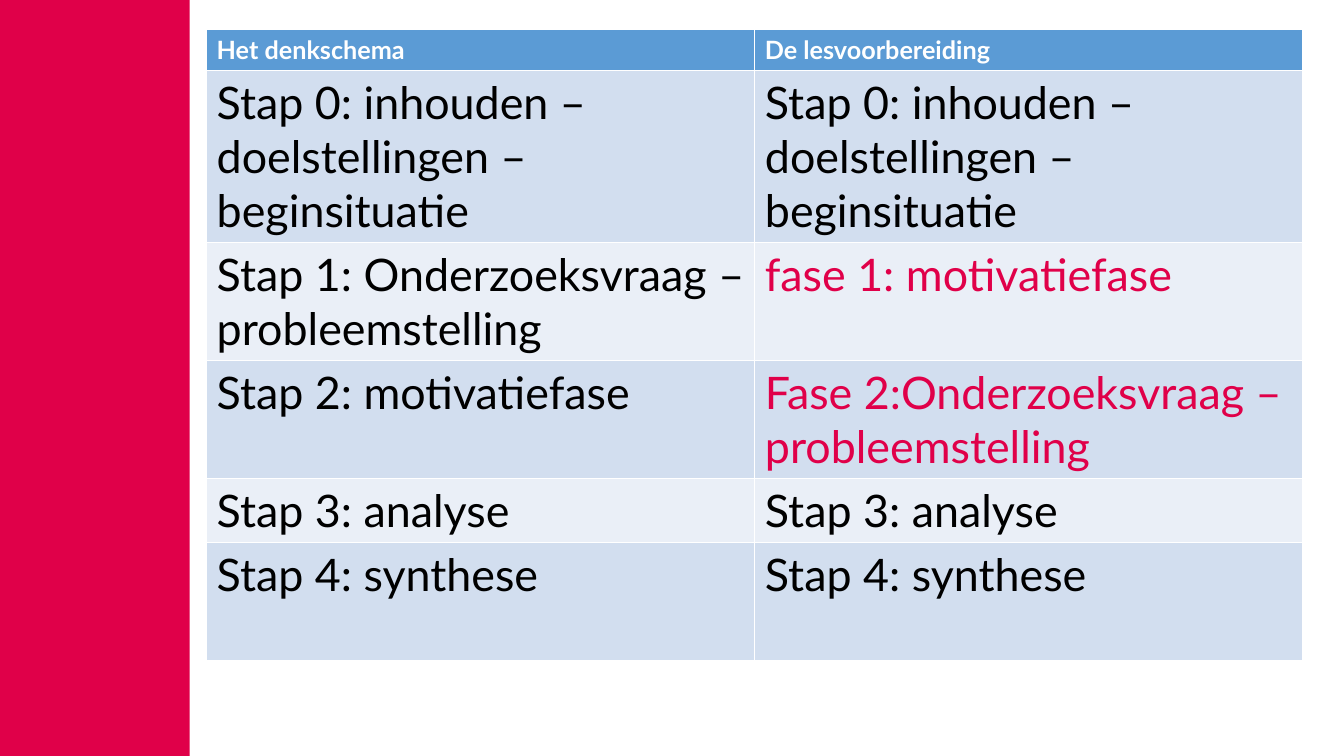
import pptx
import pptx.util
import pptx.dml.color
import pptx.enum.shapes

Pt = pptx.util.Pt
RED = "E00049"
BLACK = "000000"


def paint(fill, color):
    fill.solid()
    fill.fore_color.rgb = pptx.dml.color.RGBColor.from_string(color)


deck = pptx.Presentation()
deck.slide_width = Pt(960)
deck.slide_height = Pt(540)
slide = deck.slides.add_slide(deck.slide_layouts[6])

band = slide.shapes.add_shape(
    pptx.enum.shapes.MSO_SHAPE.RECTANGLE, Pt(0), Pt(0), Pt(135.5), Pt(540))
band.shadow.inherit = False
paint(band.fill, RED)
band.line.fill.background()

start = "Stap 0: inhouden – doelstellingen – beginsituatie"
rows = [
    (29.2, "Het denkschema", "De lesvoorbereiding"),
    (122.8, start, start),
    (84.2, "Stap 1: Onderzoeksvraag – probleemstelling", "fase 1: motivatiefase"),
    (84.2, "Stap 2: motivatiefase", "Fase 2:Onderzoeksvraag – probleemstelling"),
    (46, "Stap 3: analyse", "Stap 3: analyse"),
    (84.2, "Stap 4: synthese", "Stap 4: synthese"),
]

height = sum(row[0] for row in rows)
table = slide.shapes.add_table(
    len(rows), 2, Pt(147.6), Pt(21), Pt(783.2), Pt(height)).table

for r, (high, *texts) in enumerate(rows):
    table.rows[r].height = Pt(high)
    head = r == 0
    shade = "5B9BD5" if head else ("EAEFF7", "D2DEEF")[r % 2]
    for c, text in enumerate(texts):
        cell = table.cell(r, c)
        paint(cell.fill, shade)
        cell.text = text
        font = cell.text_frame.paragraphs[0].font
        font.name = "Lato"
        font.size = Pt(18 if head else 32)
        font.bold = head
        moved = not head and texts[0] != texts[1] and c == 1
        paint(font.fill, "FFFFFF" if head else RED if moved else BLACK)

deck.save("out.pptx")
